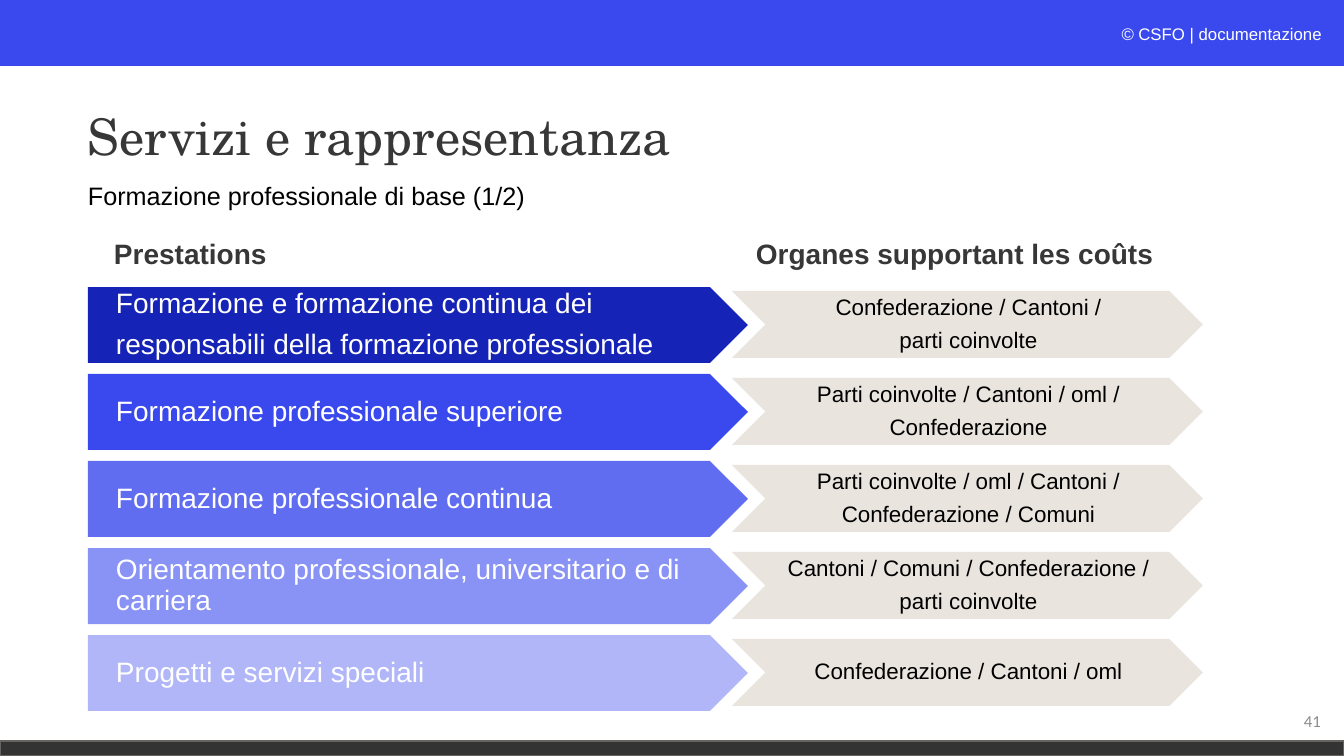
"""Build the slide on vocational training services and the bodies that fund them."""
from lxml.etree import SubElement
from pptx import Presentation
from pptx.dml.color import RGBColor
from pptx.enum.shapes import MSO_SHAPE as SHAPE
from pptx.enum.text import MSO_ANCHOR as ANCHOR, PP_ALIGN as ALIGN
from pptx.oxml.ns import qn
from pptx.util import Pt

PX = 914400 / 100.8
WHITE, BLACK, DARK, BLUE = "FFFFFF", "000000", "373737", "3A49EE"


def add_block(kind, box, fill=None):
    box = [round(v * PX) for v in box]
    if kind is None:
        return slide.shapes.add_textbox(*box)
    block = slide.shapes.add_shape(kind, *box)
    block.shadow.inherit = False
    block.fill.solid()
    block.fill.fore_color.rgb = RGBColor.from_string(fill)
    block.line.fill.background()
    return block


def write(block, lines, size, color, font="Arial", bold=False, align=ALIGN.LEFT,
          anchor=ANCHOR.TOP, insets=(10, 5, 10, 5), spacing=0.9, after=0):
    frame = block.text_frame
    frame.word_wrap = True
    frame.vertical_anchor = anchor
    (frame.margin_left, frame.margin_top,
     frame.margin_right, frame.margin_bottom) = [round(v * PX) for v in insets]
    for index, line in enumerate(lines):
        paragraph = frame.add_paragraph() if index else frame.paragraphs[0]
        paragraph.alignment = align
        paragraph.line_spacing = spacing
        paragraph.space_after = Pt(after)
        for text, italic in [(line, False)] if isinstance(line, str) else line:
            run = paragraph.add_run()
            run.text = text
            run.font.name = font
            run.font.size = Pt(size)
            run.font.bold = bold
            run.font.italic = italic
            run.font.color.rgb = RGBColor.from_string(color)


deck = Presentation()
deck.slide_width, deck.slide_height = round(1344 * PX), round(756 * PX)
slide = deck.slides.add_slide(deck.slide_layouts[6])

add_block(SHAPE.RECTANGLE, (0, 0, 1344, 66), BLUE)
footer = add_block(SHAPE.RECTANGLE, (0, 741, 1344, 15), "333333")
footer.line.color.rgb = RGBColor.from_string("666360")
footer.line.width = Pt(1)

copyright_line = [("© ", True), ("CSFO | documentazione", False)]
write(add_block(None, (869, 19, 463, 30)), [copyright_line], 12, WHITE,
      align=ALIGN.RIGHT, spacing=1)
write(add_block(None, (78, 66, 1208, 146)), ["Servizi e rappresentanza"], 36, DARK,
      font="TeX Gyre Schola", anchor=ANCHOR.MIDDLE)
write(add_block(None, (78, 179, 888, 54)), ["Formazione professionale di base (1/2)"], 18, BLACK)

services = [
    ("1623B7", ["Formazione e formazione continua dei",
                "responsabili della formazione professionale"],
     ["Confederazione / Cantoni /", "parti coinvolte"]),
    (BLUE, ["Formazione professionale superiore"],
     ["Parti coinvolte / Cantoni / oml /", "Confederazione"]),
    ("616DF1", ["Formazione professionale continua"],
     ["Parti coinvolte / oml / Cantoni /", "Confederazione / Comuni"]),
    ("8992F5", ["Orientamento professionale, universitario e di carriera"],
     ["Cantoni / Comuni / Confederazione /", "parti coinvolte"]),
    ("B0B6F8", ["Progetti e servizi speciali"],
     ["Confederazione / Cantoni / oml"]),
]
for row, (shade, service, funders) in enumerate(services):
    top = 287 + 87 * row
    service_arrow = add_block(SHAPE.PENTAGON, (88, top, 660, 76), shade)
    write(service_arrow, service, 20, WHITE, anchor=ANCHOR.MIDDLE,
          insets=(28, 1, 0, 1), after=8)
    funder_arrow = add_block(SHAPE.CHEVRON, (732, top + 4, 471, 67), "E8E2DB")
    tint = funder_arrow.fill._xPr.find(qn("a:solidFill"))[0]
    SubElement(tint, qn("a:alpha"), val="90000")
    write(funder_arrow, funders, 16, BLACK, align=ALIGN.CENTER, anchor=ANCHOR.MIDDLE,
          insets=(2, 1, 0, 1), after=6.3)

write(add_block(None, (1029, 701, 302, 40)), ["41"], 12, "8C8C8C", font="Calibri",
      align=ALIGN.RIGHT, anchor=ANCHOR.MIDDLE, spacing=1)
for heading, left, width in [("Prestations", 104, 255),
                             ("Organes supportant les coûts", 746, 434)]:
    write(add_block(None, (left, 235, width, 51)), [heading], 20, DARK, bold=True)

deck.save("out.pptx")
